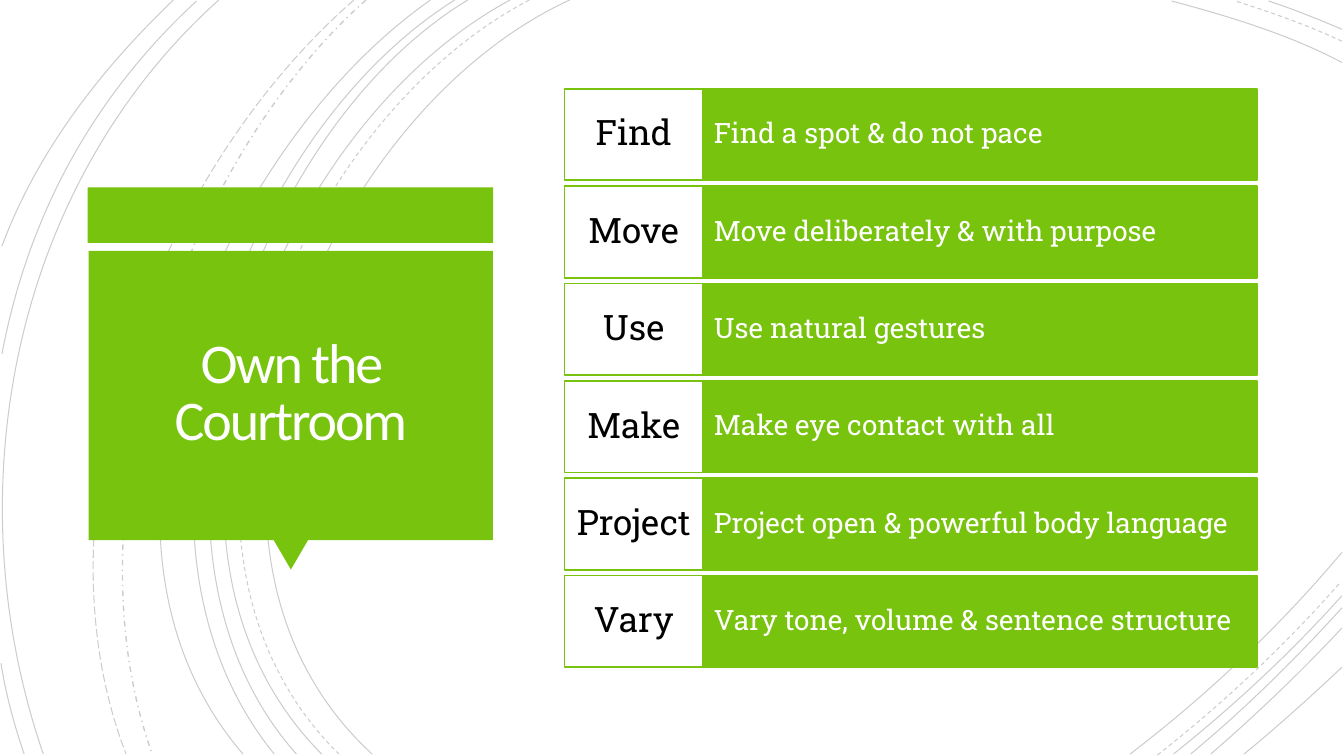
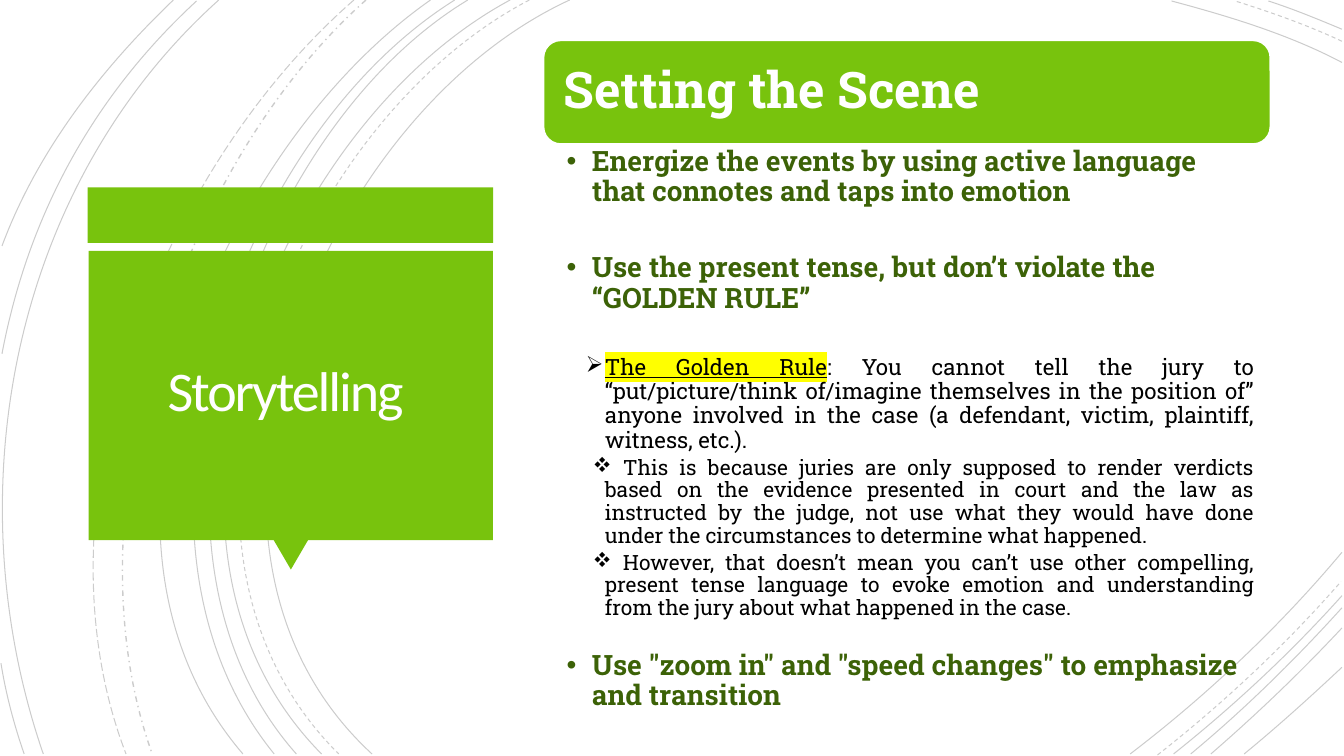
from pptx import Presentation
from pptx.dml.color import RGBColor
from pptx.enum.dml import MSO_LINE
from pptx.enum.shapes import MSO_SHAPE
from pptx.enum.text import MSO_ANCHOR, MSO_AUTO_SIZE, PP_ALIGN
from pptx.oxml.ns import qn
from pptx.util import Inches, Pt
from lxml import etree

RECT, ROUND = MSO_SHAPE.RECTANGLE, MSO_SHAPE.ROUNDED_RECTANGLE
TRIANGLE = MSO_SHAPE.ISOSCELES_TRIANGLE
SOLID, DASH = MSO_LINE.SOLID, MSO_LINE.DASH
DASH_DOT, LONG_DASH = MSO_LINE.DASH_DOT, MSO_LINE.LONG_DASH
MIDDLE, NO_FIT = MSO_ANCHOR.MIDDLE, MSO_AUTO_SIZE.NONE
LEFT, CENTER, JUSTIFY = PP_ALIGN.LEFT, PP_ALIGN.CENTER, PP_ALIGN.JUSTIFY

GREEN, DARK, WHITE, BLACK = "78C30D", "3C6207", "FFFFFF", "000000"
CREAM, YELLOW = "FFFEFF", "FFFF00"
HEAD_FONT, BODY_FONT = "Calibri", "Roboto Slab"

# Start, two control points and end of each background arc
ARCS = [
    (SOLID, (5.65, 0), (3.15, 1.15), (1.43, 5.4), (3.69, 7.48)),
    (SOLID, (13.31, 0.62), (12.78, 0.34), (12.18, 0.16), (11.62, 0.01)),
    (SOLID, (11.21, 7.48), (11.97, 6.9), (12.69, 6.22), (13.31, 5.48)),
    (DASH, (5.25, 0), (2.85, 1.25), (1.23, 5.37), (3.36, 7.48)),
    (DASH, (13.31, 0.41), (12.97, 0.25), (12.6, 0.12), (12.25, 0.01)),
    (DASH, (11.48, 7.49), (12.13, 6.98), (12.75, 6.4), (13.3, 5.77)),
    (SOLID, (5.06, 0), (2.7, 1.27), (1.1, 5.37), (3.19, 7.48)),
    (SOLID, (13.31, 0.29), (13.07, 0.19), (12.83, 0.09), (12.58, 0.01)),
    (SOLID, (11.64, 7.48), (12.23, 7.01), (12.8, 6.48), (13.31, 5.91)),
    (SOLID, (4.64, 0), (2.44, 1.33), (1.1, 5.41), (2.94, 7.48)),
    (SOLID, (11.81, 7.48), (12.34, 7.04), (12.84, 6.55), (13.31, 6.03)),
    (SOLID, (4.51, 0), (2.31, 1.38), (0.97, 5.33), (2.72, 7.48)),
    (SOLID, (12.01, 7.48), (12.46, 7.09), (12.9, 6.67), (13.31, 6.23)),
    (SOLID, (4.27, 0), (2.17, 1.47), (0.53, 5.29), (2.41, 7.48)),
    (SOLID, (12.34, 7.48), (12.67, 7.21), (12.99, 6.92), (13.31, 6.62)),
    (DASH_DOT, (3.63, 0), (1.76, 1.66), (0.65, 5.09), (1.51, 7.48)),
    (LONG_DASH, (3.51, 0), (1.57, 1.69), (0.29, 4.99), (1.25, 7.48)),
    (SOLID, (2.17, 0), (0.11, 1.85), (-0.46, 4.9), (0.43, 7.48)),
    (SOLID, (1.95, 0.01), (0.92, 0.96), (0.28, 2.14), (0.02, 3.51)),
    (SOLID, (0.01, 6.58), (0.06, 6.89), (0.14, 7.19), (0.24, 7.48)),
    (SOLID, (1.72, 0), (1, 0.69), (0.37, 1.5), (0.02, 2.44)),
]

TIPS = [
    ("Find", "Find a spot & do not pace"),
    ("Move", "Move deliberately & with purpose"),
    ("Use", "Use natural gestures"),
    ("Make", "Make eye contact with all"),
    ("Project", "Project open & powerful body language"),
    ("Vary", "Vary tone, volume & sentence structure"),
]

# Style: bullet font, bullet, size, colour, bold, align, left margin, indent
STYLES = {
    "main": ("Arial", "•", 20, DARK, True, LEFT, 0.25, -0.25),
    "rule": ("Wingdings", "Ø", 16, BLACK, False, JUSTIFY, 0.38, -0.19),
    "why": ("Wingdings", "v", 15, BLACK, False, JUSTIFY, 0.38, -0.12),
}
TERM = "The Golden Rule"
# Style, space after in points, runs
SCENE = [
    ("main", 33, ["Energize the events by using active language that connotes "
                  "and taps into emotion"]),
    ("main", 30, ["Use the present tense, but don’t violate the “GOLDEN RULE”"]),
    ("rule", 3, [TERM, ": You cannot tell the jury to “put/picture/think of/imagine "
                 "themselves in the position of” anyone involved in the case "
                 "(a defendant, victim, plaintiff, witness, etc.)."]),
    ("why", 3, [" This is because juries are only supposed to render verdicts based "
                "on the evidence presented in court and the law as instructed by the "
                "judge, not use what they would have done under the circumstances "
                "to determine what happened."]),
    ("why", 22, [" However, that doesn’t mean you can’t use other compelling, "
                 "present tense language to evoke emotion and understanding from "
                 "the jury about what happened in the case."]),
    ("main", 0, ['Use "zoom in" and "speed changes" to emphasize and transition']),
]


def rgb(code):
    return RGBColor.from_string(code)


def style(run, size, color, font=BODY_FONT, bold=False):
    run.font.size, run.font.name, run.font.bold = Pt(size), font, bold
    run.font.color.rgb = rgb(color)


def inset(frame, left, top, right, bottom):
    frame.word_wrap, frame.auto_size = True, NO_FIT
    frame.margin_left, frame.margin_top = Inches(left), Inches(top)
    frame.margin_right, frame.margin_bottom = Inches(right), Inches(bottom)


def box(slide, kind, at, fill, line=None):
    shape = slide.shapes.add_shape(kind, *map(Inches, at))
    shape.shadow.inherit = False
    shape.fill.solid()
    shape.fill.fore_color.rgb = rgb(fill)
    if line:
        shape.line.color.rgb = rgb(line)
        shape.line.width = Pt(1.25)
    else:
        shape.line.fill.background()
    return shape


def label(shape, text, size, color, pad, align=LEFT, bold=False):
    """Put one line of text in a shape, centred in height."""
    frame = shape.text_frame
    inset(frame, *pad)
    frame.vertical_anchor = MIDDLE
    frame.text = text
    para = frame.paragraphs[0]
    para.alignment, para.line_spacing = align, 0.9
    style(para.runs[0], size, color, bold=bold)


def arc(slide, dash, *points):
    """Draw an open outline and bend its three segments into one cubic curve."""
    dots = [tuple(map(Inches, point)) for point in points]
    pen = slide.shapes.build_freeform(*dots[0], scale=1.0)
    pen.add_line_segments(dots[1:], close=False)
    shape = pen.convert_to_shape()
    legs = list(shape.element.iter(qn("a:lnTo")))
    curve = etree.SubElement(legs[0].getparent(), qn("a:cubicBezTo"))
    for leg in legs:
        curve.append(leg[0])
        leg.getparent().remove(leg)
    shape.shadow.inherit = False
    shape.fill.background()
    shape.line.color.rgb = rgb(BLACK)
    shape.line.width = Pt(1 if dash == DASH_DOT else 0.75)
    shape.line.dash_style = dash
    tint = shape.element.spPr.find(qn("a:ln")).find(".//" + qn("a:srgbClr"))
    etree.SubElement(tint, qn("a:alpha")).set("val", "20000")
    return shape


def dress(layout, slide):
    """Draw the shared background on a slide, then move it into the layout."""
    for spot in list(layout.placeholders):
        if spot.placeholder_format.idx:
            spot.element.getparent().remove(spot.element)
    title = layout.placeholders[0]
    title.left, title.top, title.width, title.height = map(Inches, (0.97, 2.57, 3.83, 2.69))
    inset(title.text_frame, *[0.25] * 4)
    title.text_frame.vertical_anchor = MIDDLE
    parts = [arc(slide, *row) for row in ARCS]
    parts.append(box(slide, RECT, (0.87, 1.86, 4.02, 0.55), GREEN))
    tip = box(slide, TRIANGLE, (2.71, 5.35, 0.35, 0.3), GREEN)
    tip.rotation = 180
    parts += [tip, box(slide, RECT, (0.88, 2.49, 4.01, 2.87), GREEN)]
    for part in parts:
        title.element.addprevious(part.element)


def head(slide, text):
    title = slide.shapes.title
    title.text_frame.text = text
    para = title.text_frame.paragraphs[0]
    para.alignment, para.line_spacing = CENTER, 0.85
    style(para.runs[0], 40, CREAM, HEAD_FONT)
    para.runs[0].font._element.set("spc", "-150")


def tips(slide):
    left, top, tall, pitch, split, wide = 5.6, 0.88, 0.91, 4.83 / 5, 1.37, 5.5
    for i, (word, text) in enumerate(TIPS):
        y = top + i * pitch
        bar = box(slide, RECT, (left + split, y, wide, tall), GREEN, GREEN)
        label(bar, text, 20, WHITE, (0.11, 0.23, 0.11, 0.23))
        key = box(slide, RECT, (left, y, split, tall), WHITE, GREEN)
        label(key, word, 25, BLACK, (0.07, 0.09, 0.07, 0.09), CENTER)


def mark(run):
    """Underline and highlight a run."""
    run.font.underline = True
    glow = etree.Element(qn("a:highlight"))
    etree.SubElement(glow, qn("a:srgbClr")).set("val", YELLOW)
    run.font._element.find(qn("a:solidFill")).addnext(glow)


def scene(slide):
    band = box(slide, ROUND, (5.39, 0.4, 7.21, 1.03), GREEN, WHITE)
    label(band, "Setting the Scene", 36, WHITE, [0.15] * 4, bold=True)
    frame = slide.shapes.add_textbox(*map(Inches, (5.39, 1.43, 7.21, 5.67))).text_frame
    inset(frame, 0.23, 0.03, 0.16, 0.03)
    for i, (name, after, texts) in enumerate(SCENE):
        face, bullet, size, color, bold, align, margin, indent = STYLES[name]
        para = frame.add_paragraph() if i else frame.paragraphs[0]
        para.alignment, para.line_spacing = align, 0.9
        para.space_after = Pt(after)
        props = para._p.get_or_add_pPr()
        props.set("marL", str(Inches(margin)))
        props.set("indent", str(Inches(indent)))
        etree.SubElement(props, qn("a:buFont")).set("typeface", face)
        etree.SubElement(props, qn("a:buChar")).set("char", bullet)
        for text in texts:
            run = para.add_run()
            run.text = text
            style(run, size, color, bold=bold)
            if text == TERM:
                mark(run)


def main():
    deck = Presentation()
    deck.slide_width, deck.slide_height = Inches(13.33), Inches(7.5)
    layout = deck.slide_layouts[5]
    court, story = [deck.slides.add_slide(layout) for _ in range(2)]
    dress(layout, court)
    head(court, "Own the Courtroom")
    tips(court)
    head(story, "Storytelling ")
    scene(story)
    deck.save("out.pptx")


if __name__ == "__main__":
    main()
